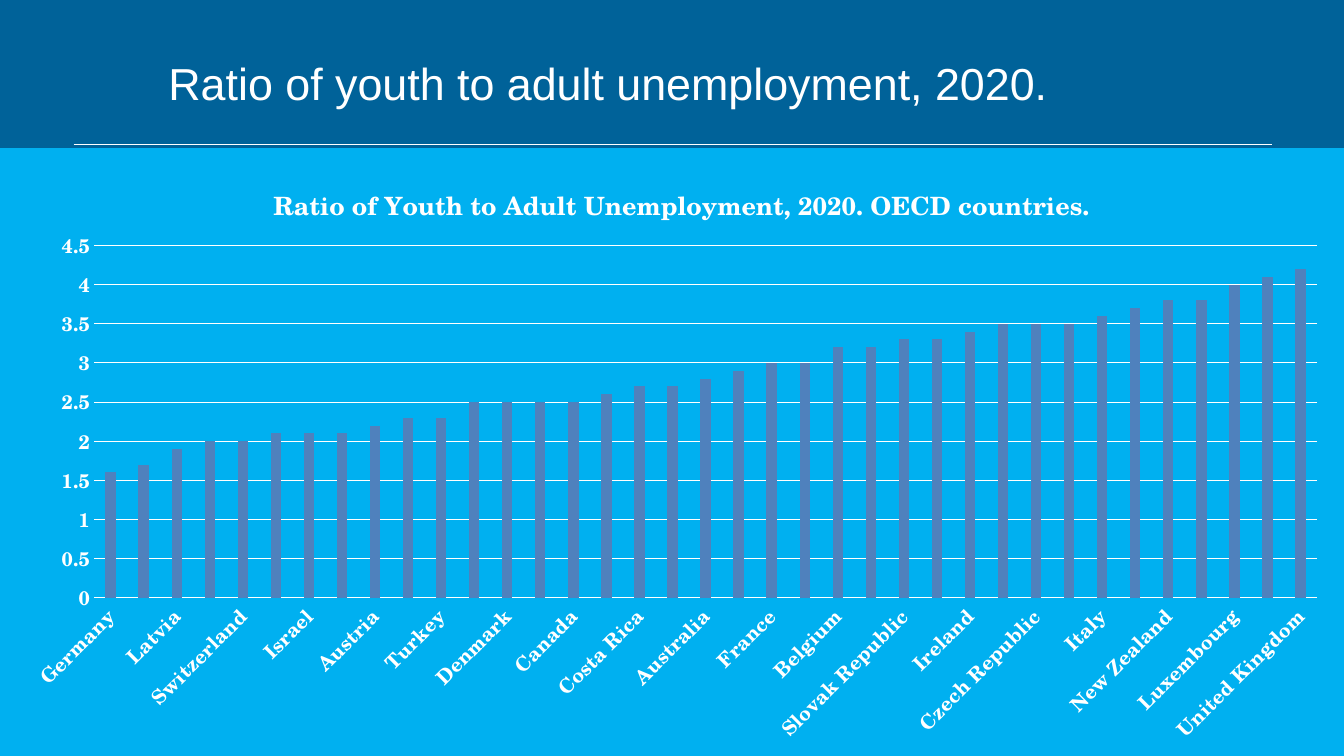
"""Build a slide charting the ratio of youth to adult unemployment in 2020."""
from lxml import etree
from pptx import Presentation
from pptx.chart.data import CategoryChartData
from pptx.dml.color import RGBColor
from pptx.enum.chart import XL_CHART_TYPE, XL_TICK_MARK
from pptx.enum.shapes import MSO_CONNECTOR
from pptx.enum.text import MSO_ANCHOR, PP_ALIGN
from pptx.oxml import parse_xml
from pptx.oxml.ns import nsdecls, qn
from pptx.util import Inches, Pt

COLUMN = XL_CHART_TYPE.COLUMN_CLUSTERED
STRAIGHT = MSO_CONNECTOR.STRAIGHT
NO_TICK = XL_TICK_MARK.NONE
MIDDLE = MSO_ANCHOR.MIDDLE
LEFT = PP_ALIGN.LEFT

HEAD = "Ratio of youth to adult unemployment, 2020."
NAME = "Ratio of Youth to Adult Unemployment, 2020. OECD countries."
RATIOS = [
    ("Germany", 1.6), ("Japan", 1.7), ("Latvia", 1.9), ("Colombia", 2),
    ("Switzerland", 2), ("United States", 2.1), ("Israel", 2.1),
    ("Iceland", 2.1), ("Austria", 2.2), ("Greece", 2.3), ("Turkey", 2.3),
    ("OECD - Total", 2.5), ("Denmark", 2.5), ("Lithuania", 2.5),
    ("Canada", 2.5), ("Chile", 2.6), ("Costa Rica", 2.7), ("Spain", 2.7),
    ("Australia", 2.8), ("Korea", 2.9), ("France", 3), ("Estonia", 3),
    ("Belgium", 3.2), ("Netherlands", 3.2), ("Slovak Republic", 3.3),
    ("Slovenia", 3.3), ("Ireland", 3.4), ("Finland", 3.5),
    ("Czech Republic", 3.5), ("Hungary", 3.5), ("Italy", 3.6),
    ("Sweden", 3.7), ("New Zealand", 3.8), ("Portugal", 3.8),
    ("Luxembourg", 4), ("Poland", 4.1), ("United Kingdom", 4.2),
]
SIZE = 13.33, 7.5
SPOTS = {
    "title": (1.57, 0.26, 10.81, 1.12),
    "rule": (0.73, 1.43, 12.62, 1.43),
    "chart": (0, 1.47, 13.33, 6.03),
}
PLOT = {"x": 0.07, "y": 0.16, "w": 0.91, "h": 0.58}
LABEL = {"x": 0.2, "y": 0.05}
THEME = {
    "back": "006299", "panel": "00B0F0", "bar": "4F81BD", "ink": "FFFFFF",
    "sans": "Arial", "serif": "TeX Gyre Schola",
    "head": 32, "name": 18, "axis": 14, "base": 10,
    "rule": 0.5, "grid": 0.75,
}


def apply(item, values):
    """Set each named value on an item."""
    for key, value in values.items():
        setattr(item, key, value)


def tint(key):
    """Return a theme colour."""
    return RGBColor.from_string(THEME[key])


def type_up(font, size, face="serif", bold=False):
    """Format a font from the theme."""
    apply(font, {"name": THEME[face], "size": Pt(THEME[size]), "bold": bold})
    font.color.rgb = tint("ink")


def draw(line, width):
    """Format a white line."""
    line.color.rgb = tint("ink")
    line.width = Pt(THEME[width])


def place(spot):
    """Turn a named spot into lengths."""
    return [Inches(n) for n in SPOTS[spot]]


def layout(sizes, inner=False):
    """Return a manual chart layout."""
    parts = '<c:layoutTarget val="inner"/>' if inner else ""
    parts += "".join(f'<c:{k}Mode val="edge"/>' for k in "xy")
    parts += "".join(f'<c:{k} val="{v}"/>' for k, v in sizes.items())
    return parse_xml(f'<c:layout {nsdecls("c")}><c:manualLayout>{parts}'
                     '</c:manualLayout></c:layout>')


def set_layout(node, sizes, inner=False):
    """Replace the layout of a chart element."""
    for old in node.findall(qn("c:layout")):
        node.remove(old)
    text = node.find(qn("c:tx"))
    node.insert(0 if text is None else 1, layout(sizes, inner))


def add_title(slide):
    """Place the slide title and its rule."""
    title = slide.shapes.title
    apply(title, dict(zip(("left", "top", "width", "height"), place("title"))))
    frame = title.text_frame
    apply(frame, {"text": HEAD, "vertical_anchor": MIDDLE, "word_wrap": True})
    para = frame.paragraphs[0]
    para.alignment = LEFT
    type_up(para.runs[0].font, "head", "sans")
    rule = slide.shapes.add_connector(STRAIGHT, *place("rule"))
    draw(rule.line, "rule")
    etree.SubElement(rule.element.spPr, qn("a:effectLst"))


def add_bars(slide):
    """Place the column chart."""
    data = CategoryChartData()
    data.categories = [land for land, ratio in RATIOS]
    data.add_series("Series 1", [ratio for land, ratio in RATIOS])
    chart = slide.shapes.add_chart(COLUMN, *place("chart"), data).chart
    apply(chart, {"has_legend": False, "has_title": True})
    type_up(chart.font, "base")

    frame = chart.chart_title.text_frame
    frame.text = NAME
    type_up(frame.paragraphs[0].runs[0].font, "name", bold=True)
    chart.chart_title.include_in_layout = False

    plot = chart.plots[0]
    apply(plot, {"gap_width": 219, "overlap": -27, "vary_by_categories": False})
    fill = plot.series[0].format.fill
    fill.solid()
    fill.fore_color.rgb = tint("bar")

    lands, scale = chart.category_axis, chart.value_axis
    for axis in (lands, scale):
        apply(axis, {"major_tick_mark": NO_TICK, "minor_tick_mark": NO_TICK})
        type_up(axis.tick_labels.font, "axis", bold=True)
    apply(scale, {"minimum_scale": 0, "maximum_scale": 4.5, "major_unit": 0.5,
                  "has_major_gridlines": True})
    draw(lands.format.line, "grid")
    draw(scale.major_gridlines.format.line, "grid")
    scale.format.line.fill.background()

    root = chart.element
    turn = root.find(".//" + qn("c:catAx")).find(qn("c:txPr") + "/" + qn("a:bodyPr"))
    turn.set("rot", "-2700000")
    set_layout(root.find(".//" + qn("c:plotArea")), PLOT, True)
    set_layout(root.find(".//" + qn("c:title")), LABEL)
    panel = parse_xml(
        f'<c:spPr {nsdecls("c", "a")}><a:solidFill><a:srgbClr val="{THEME["panel"]}"/>'
        '</a:solidFill><a:ln><a:noFill/></a:ln></c:spPr>')
    root.find(qn("c:chart")).addnext(panel)


def main():
    """Build and save the slide."""
    deck = Presentation()
    wide, high = SIZE
    apply(deck, {"slide_width": Inches(wide), "slide_height": Inches(high)})
    slide = deck.slides.add_slide(deck.slide_layouts[5])
    fill = slide.background.fill
    fill.solid()
    fill.fore_color.rgb = tint("back")
    add_title(slide)
    add_bars(slide)
    deck.save("out.pptx")


if __name__ == "__main__":
    main()
